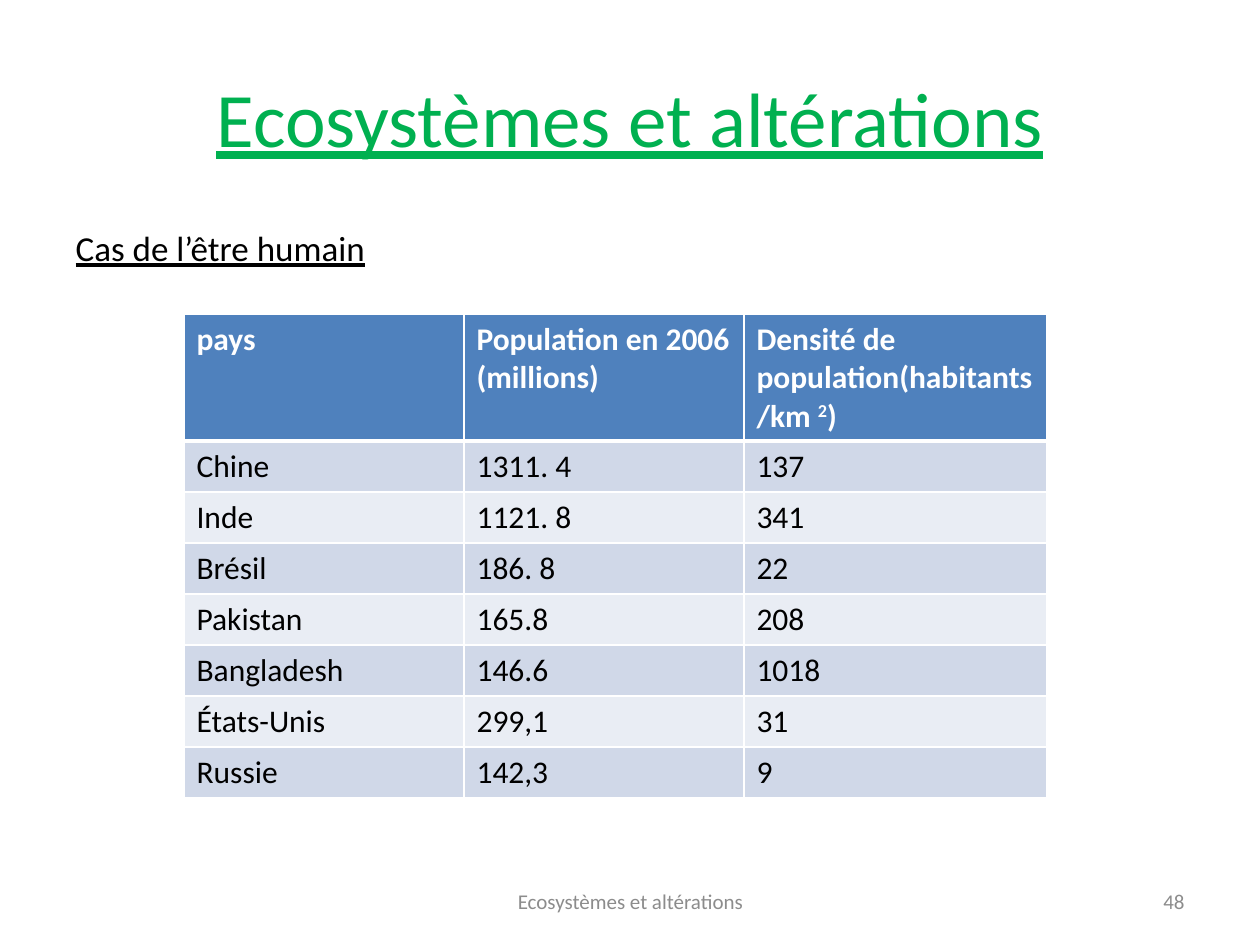
from lxml import etree
from pptx import Presentation
from pptx.dml.color import RGBColor
from pptx.enum.text import MSO_ANCHOR, PP_ALIGN
from pptx.oxml.ns import qn
from pptx.util import Emu, Pt

LEFT, CENTER, RIGHT = PP_ALIGN.LEFT, PP_ALIGN.CENTER, PP_ALIGN.RIGHT
MIDDLE = MSO_ANCHOR.MIDDLE
PX_PER_INCH = 126

COLORS = {
    "title": "00B050",
    "text": "000000",
    "footer": "8C8C8C",
    "white": "FFFFFF",
    "header": "4F81BD",
    "odd_row": "D0D8E8",
    "even_row": "E9EDF4",
}
FORMATS = {
    "title": {"size": Pt(44), "underline": True},
    "text": {"size": Pt(20), "underline": True},
    "footer": {"size": Pt(12)},
    "header": {"size": Pt(18), "bold": True},
    "cell": {"size": Pt(18), "bold": False},
}

COLUMN_WIDTHS = (280, 280, 303)
HEADER_HEIGHT, ROW_HEIGHT = 127, 51
HEADINGS = (
    ("pays",),
    ("Population en 2006 (millions)",),
    ("Densité de population(habitants /km ", "2", ")"),
)
COUNTRIES = (
    ("Chine", "1311. 4", "137"),
    ("Inde", "1121. 8", "341"),
    ("Brésil", "186. 8", "22"),
    ("Pakistan", "165.8", "208"),
    ("Bangladesh", "146.6", "1018"),
    ("États-Unis", "299,1", "31"),
    ("Russie", "142,3", "9"),
)


def px(length):
    return Emu(round(length * 914400 / PX_PER_INCH))


def place(holder, box):
    holder.left, holder.top, holder.width, holder.height = map(px, box)


def write(paragraph, words, kind, color, align=LEFT):
    paragraph.alignment = align
    run = paragraph.add_run()
    run.text = words
    run.font.name = "Calibri"
    run.font.color.rgb = RGBColor.from_string(COLORS[color])
    for attribute, value in FORMATS[kind].items():
        setattr(run.font, attribute, value)
    return run


def add_title(slide, box):
    title = slide.shapes.title
    place(title, box)
    title.text_frame.vertical_anchor = MIDDLE
    write(title.text_frame.paragraphs[0], "Ecosystèmes et altérations", "title", "title", CENTER)


def add_subject(slide, box):
    body = slide.placeholders[1]
    place(body, box)
    subject = body.text_frame.paragraphs[0]
    properties = subject._p.get_or_add_pPr()
    properties.set("marL", "0")
    properties.set("indent", "0")
    etree.SubElement(properties, qn("a:buNone"))
    subject.space_before = Pt(0)
    write(subject, "Cas de l’être humain", "text", "text")


def add_footer(slide, box, words, align):
    frame = slide.shapes.add_textbox(*map(px, box)).text_frame
    frame.word_wrap = True
    frame.vertical_anchor = MIDDLE
    write(frame.paragraphs[0], words, "footer", "footer", align)


def style_cell(cell, fill, bottom_width):
    properties = cell._tc.get_or_add_tcPr()
    widths = {"lnL": 1, "lnR": 1, "lnT": 1, "lnB": bottom_width}
    for side, width in widths.items():
        border = etree.SubElement(properties, qn(f"a:{side}"), w=str(Pt(width)))
        paint = etree.SubElement(border, qn("a:solidFill"))
        etree.SubElement(paint, qn("a:srgbClr"), val=COLORS["white"])
    cell.fill.solid()
    cell.fill.fore_color.rgb = RGBColor.from_string(COLORS[fill])


def add_population_table(slide, left, top):
    heights = [HEADER_HEIGHT] + [ROW_HEIGHT] * len(COUNTRIES)
    box = (left, top, sum(COLUMN_WIDTHS), sum(heights))
    table = slide.shapes.add_table(len(heights), len(COLUMN_WIDTHS), *map(px, box)).table
    for column, width in zip(table.columns, COLUMN_WIDTHS):
        column.width = px(width)
    for row, height in zip(table.rows, heights):
        row.height = px(height)

    for column, parts in enumerate(HEADINGS):
        cell = table.cell(0, column)
        style_cell(cell, "header", 3)
        for index, part in enumerate(parts):
            run = write(cell.text_frame.paragraphs[0], part, "header", "white")
            if index == 1:
                run._r.get_or_add_rPr().set("baseline", "30000")

    for row, country in enumerate(COUNTRIES, 1):
        for column, value in enumerate(country):
            cell = table.cell(row, column)
            style_cell(cell, "odd_row" if row % 2 else "even_row", 1)
            write(cell.text_frame.paragraphs[0], value, "cell", "text")


def main():
    deck = Presentation()
    deck.slide_width, deck.slide_height = px(1260), px(945)
    slide = deck.slides.add_slide(deck.slide_layouts[1])
    add_title(slide, (63, 38, 1134, 157))
    add_subject(slide, (63, 220, 1134, 624))
    add_footer(slide, (431, 876, 399, 50), "Ecosystèmes et altérations", CENTER)
    add_footer(slide, (903, 876, 294, 50), "48", RIGHT)
    add_population_table(slide, 184, 314)
    deck.save("out.pptx")


if __name__ == "__main__":
    main()
